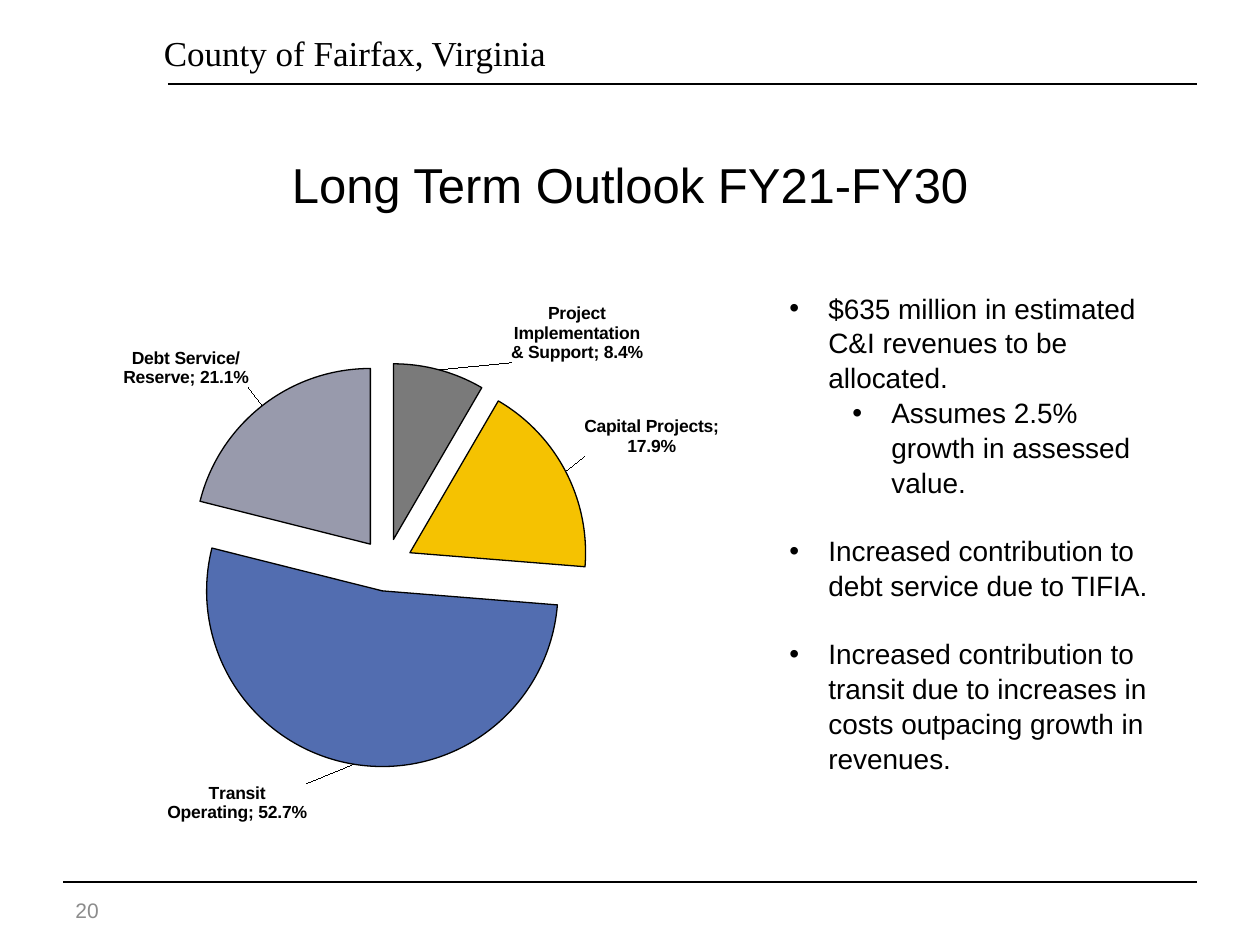
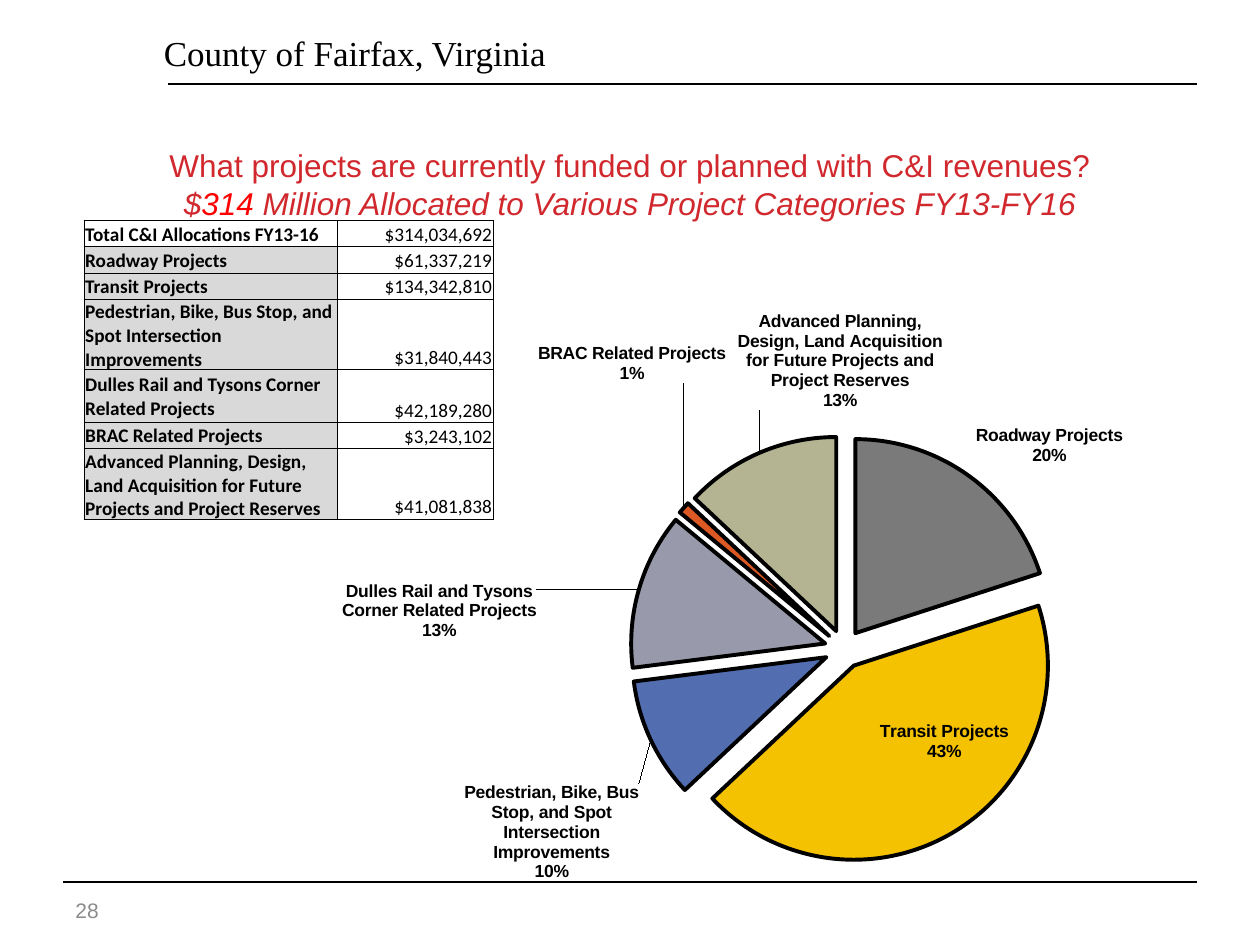
import dataclasses
import typing

import pptx
import pptx.chart.data
import pptx.dml.color
import pptx.enum.chart
import pptx.enum.shapes
import pptx.enum.text
import pptx.oxml
import pptx.oxml.ns
import pptx.util

ALIGN = pptx.enum.text.PP_ALIGN
ANCHOR = pptx.enum.text.MSO_ANCHOR


# Theme: colours, fonts and type sizes
@dataclasses.dataclass(frozen=True)
class Theme:
    black: str = "000000"
    grey: str = "8C8C8C"
    label_fill: str = "D9D9D9"
    red: str = "D1282E"
    bright_red: str = "FF0000"
    slices: tuple[str, ...] = ("7A7A7A", "F5C201", "526DB0", "989AAC", "DC5924", "B4B392")
    sans: str = "Arial"
    serif: str = "Times New Roman"
    table_font: str = "Calibri"
    title: int = 28
    header: int = 20
    question: int = 18
    body: int = 16
    page: int = 12
    table: int = 11
    chart_label: int = 10


THEME = Theme()
COLUMNS, ROWS = 120, 90  # the slide's grid; one cell is a twelfth of an inch


# Building blocks
class Box(typing.NamedTuple):
    col: float
    row: float
    cols: float
    rows: float


class Run(typing.NamedTuple):
    text: str
    size: float
    color: str = THEME.black
    font: str = THEME.sans
    bold: bool = False
    italic: bool = False


class Bullet(typing.NamedTuple):
    text: str
    level: int = 0
    gap: float = 0


class Slice(typing.NamedTuple):
    name: str
    value: float
    dx: float  # label shift, as a share of the chart's width
    dy: float  # label shift, as a share of the chart's height


@dataclasses.dataclass(frozen=True)
class Pie:
    box: Box
    plot: Box  # shares of the chart's size
    slices: list[Slice]
    explosion: int
    line_width: float
    value_format: str
    percent: bool
    separator: str


class TableRow(typing.NamedTuple):
    name: str
    amount: str
    rows: float = 2.5


HEADER_BOX = Box(15.6, 3, 44.4, 5.5)
TITLE_BOX = Box(6, 10, 108, 15)
BODY_BOX = Box(74, 27, 37.2, 59.4)
PAGE_BOX = Box(6, 84.25, 28, 4.8)
TABLE_BOX = Box(8, 21, 39, 28)
TABLE_COLUMNS = (24.1, 14.9)

OUTLOOK_PIE = Pie(
    Box(5, 27, 68, 54), Box(0.185, 0.14, 0.566, 0.713),
    [
        Slice("Project\nImplementation & Support", 0.084, 0.098, 0),
        Slice("Capital Projects", 0.179, 0.017, -0.02),
        Slice("Transit Operating", 0.527, -0.064, 0.021),
        Slice("Debt Service/Reserve", 0.211, -0.013, -0.021),
    ],
    explosion=15, line_width=0.75, value_format="0.0%", percent=False, separator="; ")

FUNDING_PIE = Pie(
    Box(19, 13.9, 98.6, 76.6), Box(0.416, 0.36, 0.413, 0.531),
    [
        Slice("Roadway Projects", 20, 0.002, -0.006),
        Slice("Transit Projects", 43, -0.074, -0.146),
        Slice("Pedestrian, Bike, Bus Stop, and Spot Intersection Improvements", 10, -0.005, 0.05),
        Slice("Dulles Rail and Tysons Corner Related Projects", 13, -0.092, 0.066),
        Slice("BRAC Related Projects", 1, 0.046, -0.149),
        Slice("Advanced Planning, Design, Land Acquisition for Future Projects "
              "and Project Reserves", 13, 0.18, -0.045),
    ],
    explosion=10, line_width=2.25, value_format="0%", percent=True, separator="\n")

ALLOCATIONS = [TableRow("Total C&I Allocations FY13-16", "$314,034,692")] + [
    TableRow(part.name, amount, rows) for part, amount, rows in zip(
        FUNDING_PIE.slices,
        ("$61,337,219", "$134,342,810", "$31,840,443", "$42,189,280", "$3,243,102", "$41,081,838"),
        (2.5, 2.5, 5, 5, 2.5, 5))
]

OUTLOOK_POINTS = [
    Bullet("$635 million in estimated C&I revenues to be allocated."),
    Bullet("Assumes 2.5% growth in assessed value.", level=1),
    Bullet("Increased contribution to debt service due to TIFIA.", gap=19),
    Bullet("Increased contribution to transit due to increases in costs "
           "outpacing growth in revenues.", gap=19),
]


# Grid and text helpers
def x(prs, cols: float) -> int:
    return round(prs.slide_width * cols / COLUMNS)


def y(prs, rows: float) -> int:
    return round(prs.slide_height * rows / ROWS)


def place(prs, box: Box) -> tuple[int, int, int, int]:
    return x(prs, box.col), y(prs, box.row), x(prs, box.cols), y(prs, box.rows)


def rgb(color: str):
    return pptx.dml.color.RGBColor.from_string(color)


def xml(tag: str, body: str = "", attrs: str = ""):
    ns = pptx.oxml.ns.nsdecls(tag.split(":")[0], "a")
    if tag.startswith("a:"):
        ns = pptx.oxml.ns.nsdecls("a")
    return pptx.oxml.parse_xml(f"<{tag} {ns} {attrs}>{body}</{tag}>")


def add_run(p, run: Run) -> None:
    r = p.add_run()
    r.text = run.text
    r.font.name, r.font.size = run.font, pptx.util.Pt(run.size)
    r.font.bold, r.font.italic = run.bold, run.italic
    r.font.color.rgb = rgb(run.color)


def add_text(prs, s, box: Box, lines: list[list[Run]], align=ALIGN.LEFT,
             anchor=ANCHOR.MIDDLE, inset: bool = True):
    tf = s.shapes.add_textbox(*place(prs, box)).text_frame
    tf.word_wrap, tf.vertical_anchor = True, anchor
    if not inset:
        tf.margin_left = tf.margin_right = tf.margin_top = tf.margin_bottom = 0
    p = tf.paragraphs[0]
    p.alignment = align
    for i, line in enumerate(lines):
        if i:
            p.add_line_break()
        for run in line:
            add_run(p, run)
    return tf


def add_rule(prs, s, start: float, end: float, row: float) -> None:
    sp = s.shapes.add_connector(pptx.enum.shapes.MSO_CONNECTOR.STRAIGHT,
                                x(prs, start), y(prs, row), x(prs, end), y(prs, row))
    sp.line.color.rgb, sp.line.width = rgb(THEME.black), pptx.util.Pt(0.75)
    sp._element.spPr.append(xml("a:effectLst"))


# Frame shared by the slides
def add_framed_slide(prs, title: list[list[Run]], number: str):
    s = prs.slides.add_slide(prs.slide_layouts[6])
    add_text(prs, s, HEADER_BOX,
             [[Run("County of Fairfax, Virginia", THEME.header, font=THEME.serif)]],
             anchor=ANCHOR.TOP, inset=False)
    add_rule(prs, s, 16, 114, 8)
    add_rule(prs, s, 6, 114, 84)
    add_text(prs, s, TITLE_BOX, title, ALIGN.CENTER)
    add_text(prs, s, PAGE_BOX, [[Run(number, THEME.page, THEME.grey)]])
    return s


def add_bullets(prs, s, bullets: list[Bullet]) -> None:
    tf = add_text(prs, s, BODY_BOX, [], anchor=ANCHOR.TOP)
    hang = pptx.util.Inches(0.31)
    for i, bullet in enumerate(bullets):
        p = tf.add_paragraph() if i else tf.paragraphs[0]
        p.level = bullet.level
        p.line_spacing = 1.04
        p.space_before = pptx.util.Pt(bullet.gap)
        pPr = p._p.get_or_add_pPr()
        pPr.set("marL", str(hang + bullet.level * pptx.util.Inches(0.5)))
        pPr.set("indent", str(-hang))
        pPr.append(xml("a:buFont", attrs=f'typeface="{THEME.sans}"'))
        pPr.append(xml("a:buChar", attrs='char="•"'))
        add_run(p, Run(bullet.text, THEME.body))


# Pie charts
def label_xml(pie: Pie):
    shows = (f'<c:dLblPos val="outEnd"/><c:showLegendKey val="0"/>'
             f'<c:showVal val="{int(not pie.percent)}"/><c:showCatName val="1"/>'
             f'<c:showSerName val="0"/><c:showPercent val="{int(pie.percent)}"/>'
             f'<c:showBubbleSize val="0"/><c:separator>{pie.separator}</c:separator>')
    style = (f'<c:numFmt formatCode="{pie.value_format}" sourceLinked="0"/>'
             f'<c:spPr><a:noFill/><a:ln><a:noFill/></a:ln></c:spPr>'
             f'<c:txPr><a:bodyPr/><a:p><a:pPr><a:defRPr sz="{THEME.chart_label * 100}" b="1">'
             f'<a:solidFill><a:srgbClr val="{THEME.black}"/></a:solidFill>'
             f'<a:latin typeface="{THEME.sans}"/></a:defRPr></a:pPr></a:p></c:txPr>')
    labels = "".join(
        f'<c:dLbl><c:idx val="{i}"/><c:layout><c:manualLayout><c:x val="{part.dx}"/>'
        f'<c:y val="{part.dy}"/></c:manualLayout></c:layout>{style}{shows}</c:dLbl>'
        for i, part in enumerate(pie.slices))
    return xml("c:dLbls", f'{labels}{style}{shows}<c:showLeaderLines val="1"/>')


def set_plot_box(chart, plot: Box) -> None:
    area = chart._chartSpace.chart.plotArea
    for old in area.findall(pptx.oxml.ns.qn("c:layout")):
        area.remove(old)
    sizes = "".join(f'<c:{k} val="{v}"/>' for k, v in zip("xywh", plot))
    area.insert(0, xml("c:layout", '<c:manualLayout><c:layoutTarget val="inner"/>'
                       f'<c:xMode val="edge"/><c:yMode val="edge"/>{sizes}</c:manualLayout>'))


def add_pie(prs, s, pie: Pie) -> None:
    data = pptx.chart.data.CategoryChartData()
    data.categories = [part.name for part in pie.slices]
    data.add_series("Series 1", [part.value for part in pie.slices])
    chart = s.shapes.add_chart(pptx.enum.chart.XL_CHART_TYPE.PIE, *place(prs, pie.box), data).chart
    chart.has_title = chart.has_legend = False
    chart.font.name, chart.font.size = THEME.sans, pptx.util.Pt(18)
    chart.font.color.rgb = rgb(THEME.black)
    chart.plots[0].vary_by_categories = True
    series = chart.plots[0].series[0]
    formats = [series.format] + [series.points[i].format for i in range(len(pie.slices))]
    for fmt in formats:
        fmt.line.color.rgb, fmt.line.width = rgb(THEME.black), pptx.util.Pt(pie.line_width)
    for fmt, color in zip(formats[1:], THEME.slices):
        fmt.fill.solid()
        fmt.fill.fore_color.rgb = rgb(color)
    ser = series._element
    ser.find(pptx.oxml.ns.qn("c:spPr")).addnext(xml("c:explosion", attrs=f'val="{pie.explosion}"'))
    ser.find(pptx.oxml.ns.qn("c:cat")).addprevious(label_xml(pie))
    set_plot_box(chart, pie.plot)


# Allocation table
def style_cell(cell, run: Run, align, anchor, fill: str | None) -> None:
    cell.margin_left = cell.margin_right = cell.margin_top = pptx.util.Inches(0.01)
    cell.margin_bottom = 0
    cell.vertical_anchor = anchor
    p = cell.text_frame.paragraphs[0]
    p.alignment = align
    add_run(p, run)
    tcPr = cell._tc.get_or_add_tcPr()
    for side in ("lnL", "lnR", "lnT", "lnB"):
        tcPr.append(xml(f"a:{side}", f'<a:solidFill><a:srgbClr val="{THEME.black}"/></a:solidFill>',
                        f'w="{pptx.util.Pt(0.5)}"'))
    if fill:
        cell.fill.solid()
        cell.fill.fore_color.rgb = rgb(fill)
    else:
        cell.fill.background()


def add_allocations(prs, s, rows: list[TableRow]) -> None:
    table = s.shapes.add_table(len(rows), 2, *place(prs, TABLE_BOX)).table
    table.first_row = table.horz_banding = False
    for column, cols in zip(table.columns, TABLE_COLUMNS):
        column.width = x(prs, cols)
    for i, row in enumerate(rows):
        table.rows[i].height = y(prs, row.rows)
        name = Run(row.name, THEME.table, font=THEME.table_font, bold=True)
        style_cell(table.cell(i, 0), name, ALIGN.LEFT, ANCHOR.MIDDLE if i else ANCHOR.BOTTOM,
                   THEME.label_fill if i else None)
        amount = Run(row.amount, THEME.table, font=THEME.table_font)
        style_cell(table.cell(i, 1), amount, ALIGN.RIGHT, ANCHOR.BOTTOM, None)


def main() -> None:
    prs = pptx.Presentation()
    prs.slide_width, prs.slide_height = pptx.util.Inches(10), pptx.util.Inches(7.5)

    # Long term outlook
    s = add_framed_slide(prs, [[Run("Long Term Outlook FY21-FY30", THEME.title)]], "20")
    add_pie(prs, s, OUTLOOK_PIE)
    add_bullets(prs, s, OUTLOOK_POINTS)

    # Funded projects
    question = Run("What projects are currently funded or planned with C&I revenues?",
                   THEME.question, THEME.red)
    answer = [
        Run("$", THEME.question, THEME.red, italic=True),
        Run("314 ", THEME.question, THEME.bright_red, italic=True),
        Run("Million Allocated to Various Project Categories FY13-FY16",
            THEME.question, THEME.red, italic=True),
    ]
    s = add_framed_slide(prs, [[question], answer], "28")
    add_allocations(prs, s, ALLOCATIONS)
    add_pie(prs, s, FUNDING_PIE)
    prs.save("out.pptx")


if __name__ == "__main__":
    main()
